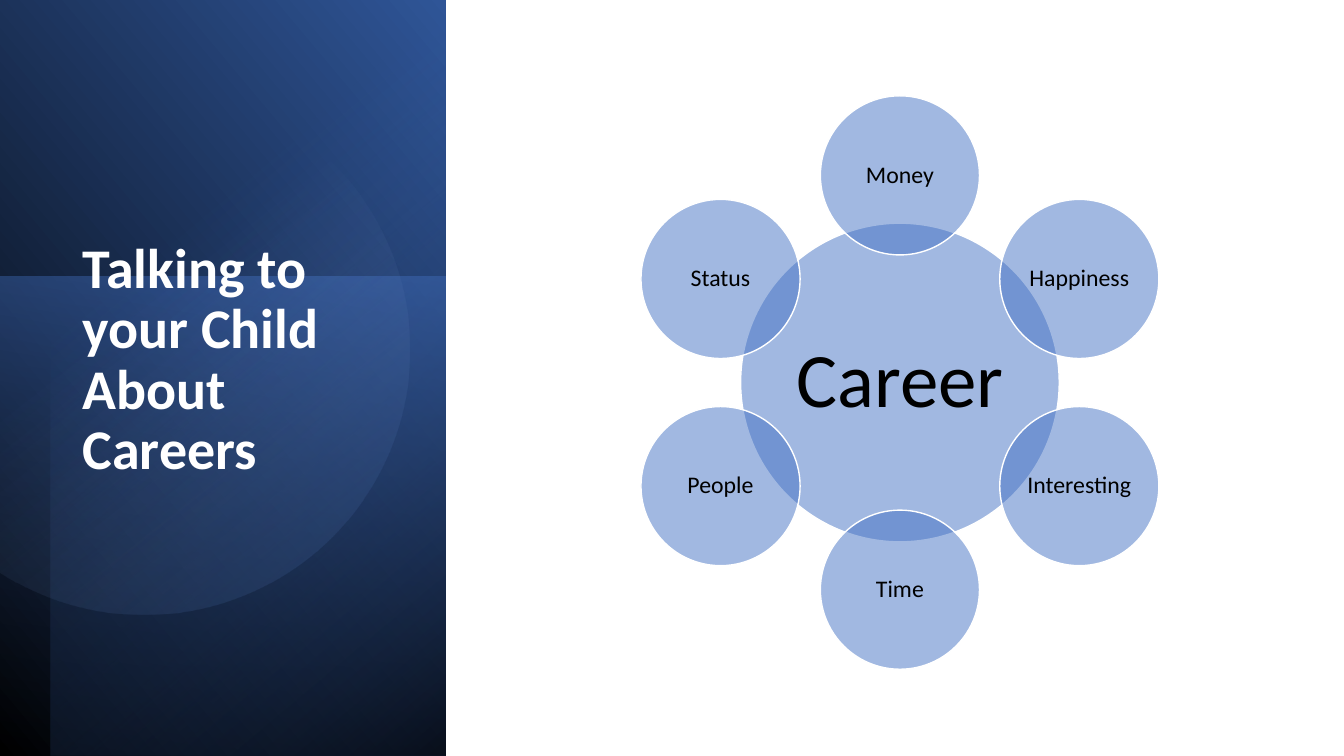
"""Build a slide with a title panel and a radial diagram of career factors."""
import math

import lxml.etree
import pptx
import pptx.dml.color
import pptx.enum.shapes
import pptx.enum.text
import pptx.oxml.ns
import pptx.util

Cm = pptx.util.Cm
Pt = pptx.util.Pt
qn = pptx.oxml.ns.qn
SHAPE = pptx.enum.shapes.MSO_SHAPE
ALIGN = pptx.enum.text.PP_ALIGN
ANCHOR = pptx.enum.text.MSO_ANCHOR

TITLE = "Talking to your Child About Careers"
HUB = "Career"
FACTORS = ["Money", "Happiness", "Interesting", "Time", "People", "Status"]

FONT = "Calibri"
COLOURS = {
    "white": "FFFFFF",
    "black": "000000",
    "blue": "4472C4",
    "dark": "2F5597",
    "navy": "203864",
    "light": "8FAADC",
}
PANELS = [
    {"box": (0, 0, 11.23, 19.05), "rotation": 90, "flip": True, "angle": 310,
     "stops": [(0, "black", 100), (100, "dark", 100)]},
    {"box": (0, 6.96, 11.23, 12.09), "rotation": 270, "flip": False, "angle": 190,
     "stops": [(0, "blue", 50), (100, "navy", 0)]},
    {"box": (1.27, 0, 9.96, 19.05), "rotation": 270, "flip": True, "angle": 220,
     "stops": [(0, "black", 59), (69, "blue", 0)]},
]
DISC = {"centre": (3.63, 8.81), "radius": 6.68, "angle": 51.6, "steps": 120,
        "stops": [(39, "light", 0), (100, "dark", 26)]}
HUB_CENTRE = (22.68, 9.64)
HUB_SIZE = 8.03
FACTOR_SIZE = 4.01
ORBIT = 5.22


def colour(name):
    return pptx.dml.color.RGBColor.from_string(COLOURS[name])


def add_alpha(colour_element, percent):
    alpha = lxml.etree.SubElement(colour_element, qn("a:alpha"))
    alpha.set("val", str(percent * 1000))


def fill_gradient(shape, stops, angle):
    shape.shadow.inherit = False
    shape.line.fill.background()
    shape.fill.background()
    properties = shape.element.spPr
    gradient = lxml.etree.Element(qn("a:gradFill"), rotWithShape="1")
    stop_list = lxml.etree.SubElement(gradient, qn("a:gsLst"))
    for position, name, opacity in stops:
        stop = lxml.etree.SubElement(stop_list, qn("a:gs"), pos=str(position * 1000))
        add_alpha(lxml.etree.SubElement(stop, qn("a:srgbClr"), val=COLOURS[name]), opacity)
    lxml.etree.SubElement(gradient, qn("a:lin"), ang=str(round(angle * 60000)), scaled="0")
    properties.replace(properties.find(qn("a:noFill")), gradient)


def add_panel(slide, box, rotation, flip, angle, stops):
    left, top, width, height = box
    shape = slide.shapes.add_shape(
        SHAPE.RECTANGLE, Cm(left + (width - height) / 2), Cm(top + (height - width) / 2),
        Cm(height), Cm(width))
    shape.rotation = rotation
    if flip:
        shape.element.spPr.find(qn("a:xfrm")).set("flipH", "1")
    fill_gradient(shape, stops, angle)


def add_disc(slide, centre, radius, angle, steps, stops):
    limit = math.acos(-centre[0] / radius)
    turns = [limit * (2 * step / steps - 1) for step in range(steps + 1)]
    points = [(Cm(centre[0] + radius * math.cos(turn)),
               Cm(centre[1] + radius * math.sin(turn))) for turn in turns]
    builder = slide.shapes.build_freeform(*points[0])
    builder.add_line_segments(points[1:], close=True)
    fill_gradient(builder.convert_to_shape(), stops, angle)


def write_text(shape, text, size, name="black", bold=False, align=ALIGN.CENTER,
               anchor=ANCHOR.MIDDLE, inset=None):
    frame = shape.text_frame
    frame.word_wrap = True
    frame.auto_size = pptx.enum.text.MSO_AUTO_SIZE.NONE
    frame.vertical_anchor = anchor
    if inset is not None:
        frame.margin_left = frame.margin_right = Cm(inset)
        frame.margin_top = frame.margin_bottom = Cm(inset)
    frame.text = text
    paragraph = frame.paragraphs[0]
    paragraph.alignment = align
    paragraph.line_spacing = 0.9
    font = paragraph.runs[0].font
    font.name = FONT
    font.size = Pt(size)
    font.bold = bold
    font.color.rgb = colour(name)


def add_circle(slide, text, centre, diameter, size, inset):
    shape = slide.shapes.add_shape(
        SHAPE.OVAL, Cm(centre[0] - diameter / 2), Cm(centre[1] - diameter / 2),
        Cm(diameter), Cm(diameter))
    shape.shadow.inherit = False
    shape.fill.solid()
    shape.fill.fore_color.rgb = colour("blue")
    add_alpha(shape.element.spPr.find(qn("a:solidFill"))[0], 50)
    shape.line.color.rgb = colour("white")
    shape.line.width = Pt(1)
    write_text(shape, text, size, inset=inset)


def main():
    presentation = pptx.Presentation()
    presentation.slide_width = Cm(33.87)
    presentation.slide_height = Cm(19.05)
    slide = presentation.slides.add_slide(presentation.slide_layouts[5])

    for panel in PANELS:
        add_panel(slide, **panel)
    add_disc(slide, **DISC)

    title = slide.shapes.title
    title.left, title.top, title.width, title.height = Cm(1.83), Cm(5.92), Cm(8), Cm(10.29)
    write_text(title, TITLE, 40, name="white", bold=True, align=ALIGN.LEFT, anchor=ANCHOR.TOP)
    title.element.getparent().append(title.element)

    add_circle(slide, HUB, HUB_CENTRE, HUB_SIZE, 55, 0.2)
    for index, factor in enumerate(FACTORS):
        turn = 2 * math.pi * index / len(FACTORS)
        centre = (HUB_CENTRE[0] + ORBIT * math.sin(turn),
                  HUB_CENTRE[1] - ORBIT * math.cos(turn))
        add_circle(slide, factor, centre, FACTOR_SIZE, 17, 0.05)

    presentation.save("out.pptx")


if __name__ == "__main__":
    main()
